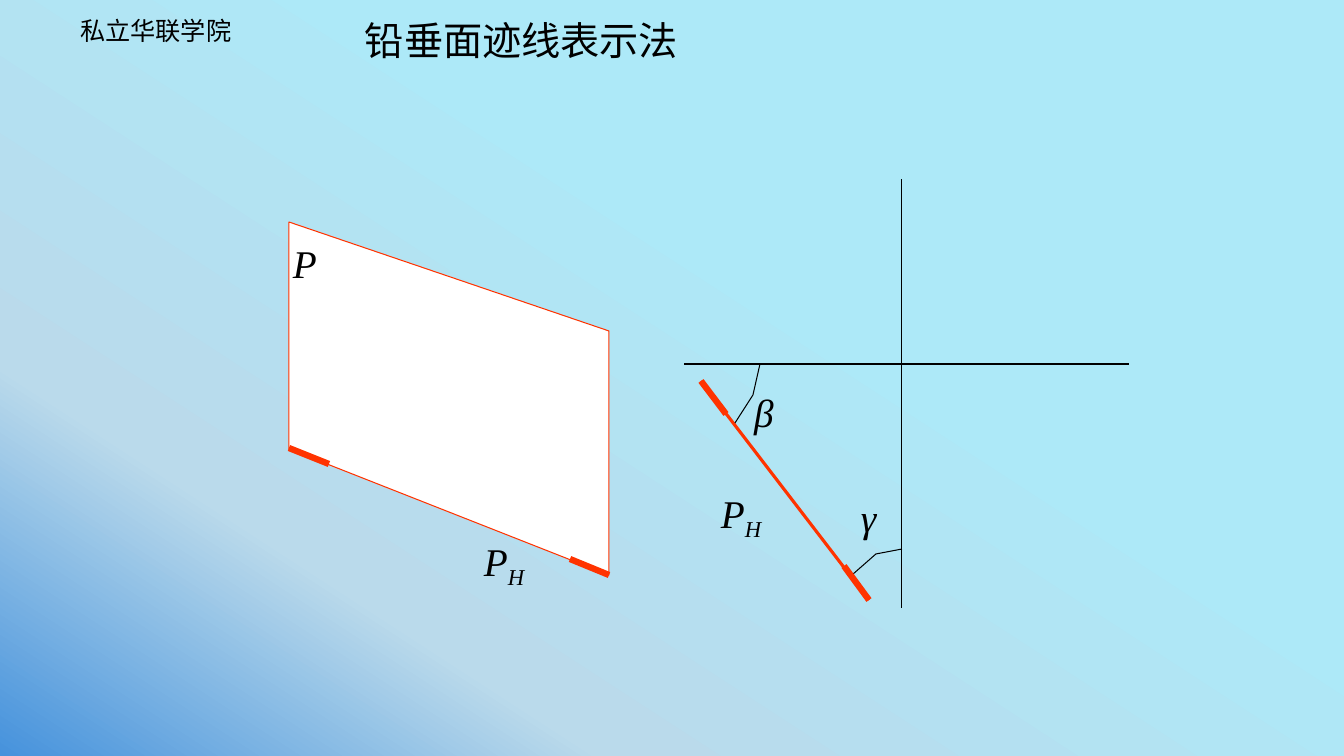
import copy
import pptx
import pptx.dml.color
import pptx.enum.dml
import pptx.enum.shapes
import pptx.enum.text
import pptx.oxml
import pptx.oxml.ns
import pptx.util

PX = 914400 / 100.8
HUES = {"ink": "000000", "red": "FF3300", "white": "FFFFFF",
        "deep": "4692DC", "mist": "BADAEB", "sky": "ADE9F8"}
CJK = "Noto Sans CJK JP"


def emu(n):
    return pptx.util.Emu(round(n * PX))


def rgb(hue):
    return pptx.dml.color.RGBColor.from_string(HUES[hue])


class Board:
    """Holds the style, the slide and the group being drawn into."""

    def __init__(self, deck):
        self.slide = deck.slides.add_slide(deck.slide_layouts[6])
        self.home = self.slide.shapes
        self.pen = self.home
        self.math = {"name": "Times New Roman", "size": pptx.util.Pt(28), "italic": True}

    def group(self):
        self.pen = self.home.add_group_shape().shapes

    def back(self, stops, angle):
        fill = self.slide.background.fill
        fill.gradient()
        fill.gradient_angle = angle
        first = fill.gradient_stops[0]
        items = self.slide.background._cSld.find(".//" + pptx.oxml.ns.qn("a:gsLst"))
        while len(items) < len(stops):
            items.append(copy.deepcopy(items[0]))
        for stop, (place, hue) in zip(fill.gradient_stops, stops):
            stop.position = place
            stop.color.rgb = rgb(hue)

    def text(self, box, words, look=None, sub="", wrap=True, pad=(10, 5), lead=None):
        frame = self.pen.add_textbox(*map(emu, box)).text_frame
        side, top = map(emu, pad)
        form = {"word_wrap": wrap, "margin_left": side, "margin_right": side,
                "margin_top": top, "margin_bottom": top,
                "vertical_anchor": pptx.enum.text.MSO_ANCHOR.TOP}
        for key, value in form.items():
            setattr(frame, key, value)
        para = frame.paragraphs[0]
        if lead:
            para.line_spacing = lead
        for part, base in ((words, 0), (sub, -25000)):
            if not part:
                continue
            run = para.add_run()
            run.text = part
            for key, value in (look or self.math).items():
                setattr(run.font, key, value)
            run.font.color.rgb = rgb("ink")
            props = run._r.get_or_add_rPr()
            if base:
                props.set("baseline", str(base))
            if not look:
                continue
            east = pptx.oxml.parse_xml(
                f'<a:ea {pptx.oxml.ns.nsdecls("a")} typeface="{CJK}"/>')
            props.append(east)

    def line(self, start, end, hue="ink", width=0.75):
        link = self.pen.add_connector(pptx.enum.shapes.MSO_CONNECTOR.STRAIGHT,
                                      *map(emu, start + end))
        link.line.color.rgb = rgb(hue)
        link.line.width = pptx.util.Pt(width)
        link._element.spPr.append(
            pptx.oxml.parse_xml(f'<a:effectLst {pptx.oxml.ns.nsdecls("a")}/>'))

    def trace(self, dots, hue="ink", width=0.75, fill=None):
        spots = [(emu(x), emu(y)) for x, y in dots]
        pen = self.pen.build_freeform(*spots[0], scale=1.0)
        pen.add_line_segments(spots[1:], close=bool(fill))
        shape = pen.convert_to_shape()
        shape.shadow.inherit = False
        if fill:
            shape.fill.solid()
            shape.fill.fore_color.rgb = rgb(fill)
        else:
            shape.fill.background()
        shape.line.color.rgb = rgb(hue)
        shape.line.width = pptx.util.Pt(width)


def main():
    deck = pptx.Presentation()
    deck.slide_width, deck.slide_height = emu(1344), emu(756)
    board = Board(deck)
    board.back([(0, "deep"), (0.24, "mist"), (0.62, "sky")], 57)

    # School name and title
    board.text((75, 10, 296, 40), "私立华联学院",
               {"name": CJK, "size": pptx.util.Pt(18)}, pad=(5, 5))
    board.text((355, 17, 551, 68), "铅垂面迹线表示法",
               {"name": "Arial", "size": pptx.util.Pt(28)}, lead=0.9)

    # Projection axes with the trace and its angles
    board.group()
    board.text((851, 488, 58, 57), "γ")
    board.text((744, 383, 41, 57), "β", wrap=False)
    board.line((1129, 364), (684, 364))
    board.line((902, 608), (902, 179))
    high, low = (701, 381), (869, 600)
    board.line(high, low, "red", 2.25)
    board.trace([(852, 575), (876, 554), (902, 549)])
    board.trace([(735, 423), (753, 395), (760, 364)])
    board.line(high, (726, 414), "red", 4.5)
    board.line(low, (844, 566), "red", 4.5)
    board.text((711, 484, 103, 57), "P", sub="H")

    # Vertical plane in space
    board.group()
    board.trace([(289, 449), (289, 222), (609, 331), (609, 575)], "red", fill="white")
    board.text((283, 234, 42, 57), "P")
    board.text((474, 532, 105, 57), "P", sub="H")
    for tip in ([(289, 448), (329, 464)], [(570, 559), (609, 575)]):
        board.trace(tip, "red", 4.5)

    deck.save("out.pptx")


if __name__ == "__main__":
    main()
